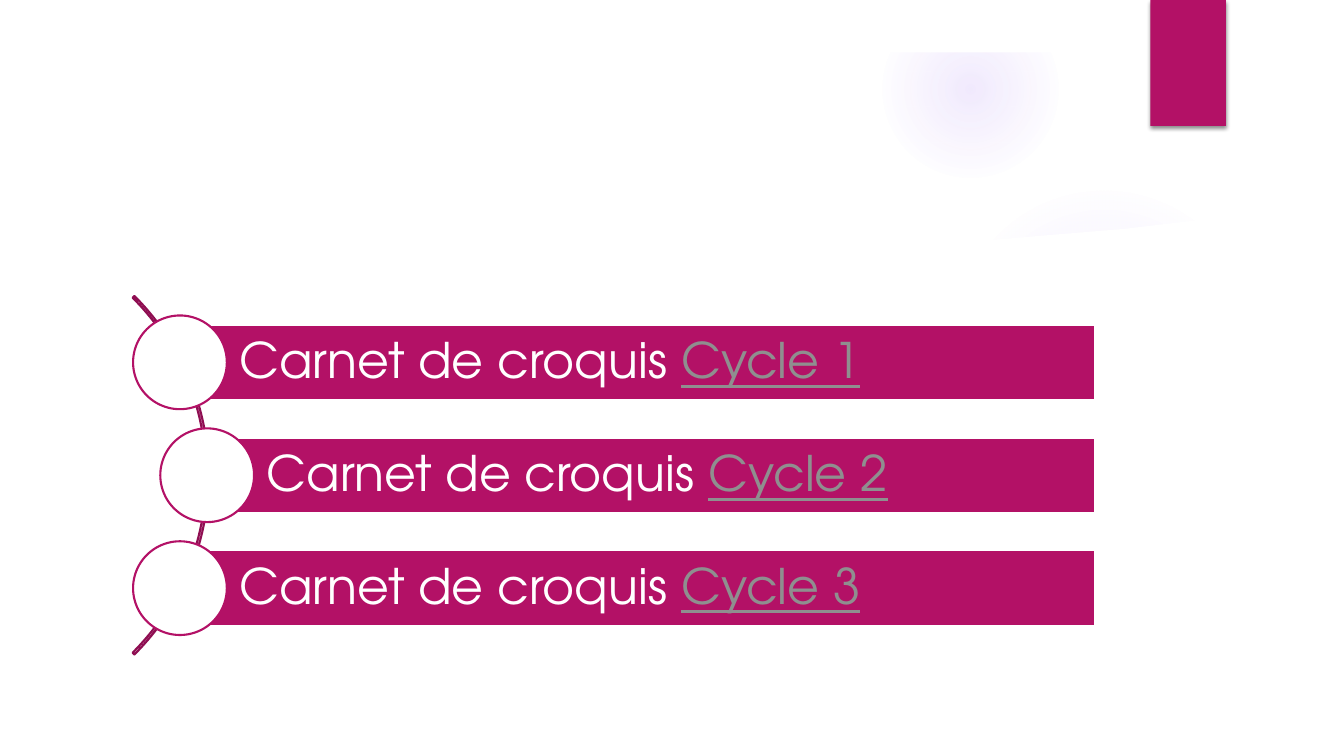
import pptx
import pptx.util
import pptx.oxml
import pptx.oxml.ns
import pptx.dml.color
import pptx.enum.shapes
import pptx.enum.text

Inches, Pt = pptx.util.Inches, pptx.util.Pt
KIND = pptx.enum.shapes.MSO_SHAPE
FONT = "TeX Gyre Adventor"
COLORS = {"pink": "B31166", "dark": "8F0E52", "white": "FFFFFF",
          "link": "8F8F8F", "glow": "9B6BF2", "shade": "000000"}
WAVE = [(0, 0), (0, 4.96), (12.33, 4.96), (12.33, 0), (11.5, 0.13),
        (10.66, 0.23), (9.82, 0.3), (8.99, 0.37), (8.17, 0.41),
        (7.36, 0.43), (6.58, 0.44), (5.57, 0.43), (4.61, 0.4),
        (3.51, 0.34), (2.33, 0.26), (1.37, 0.17), (0.63, 0.08)]
GLOWS = [((9.41, 1.83, 3.08), [(0, 7), (36, 6), (69, 0)]),
         ((8.75, 0.01, 1.75), [(0, 14), (36, 7), (73, 0)])]


def tint(name):
    """Return the named colour."""
    return pptx.dml.color.RGBColor.from_string(COLORS[name])


def paint(shape, fill=None, line=None):
    """Set the fill and outline of a shape and drop its shadow."""
    shape.shadow.inherit = False
    if fill:
        shape.fill.solid()
        shape.fill.fore_color.rgb = tint(fill)
    else:
        shape.fill.background()
    if line:
        shape.line.color.rgb = tint(line)
        shape.line.width = Pt(1.5)
    else:
        shape.line.fill.background()
    return shape


def put(slide, kind, box, fill=None, line=None):
    """Add a painted preset shape in a box given in inches."""
    shape = slide.shapes.add_shape(kind, *map(Inches, box))
    return paint(shape, fill, line)


def glow(slide, box, stops):
    """Add a round glow that fades outwards."""
    props = put(slide, KIND.OVAL, box).element.spPr
    marks = "".join(
        f'<a:gs pos="{pos * 1000}"><a:srgbClr val="{COLORS["glow"]}">'
        f'<a:alpha val="{alpha * 1000}"/></a:srgbClr></a:gs>'
        for pos, alpha in stops)
    grad = pptx.oxml.parse_xml(
        f'<a:gradFill {pptx.oxml.ns.nsdecls("a")}><a:gsLst>{marks}</a:gsLst>'
        '<a:path path="circle"><a:fillToRect l="50000" t="50000" '
        'r="50000" b="50000"/></a:path></a:gradFill>')
    props.replace(props.find(pptx.oxml.ns.qn("a:noFill")), grad)


def backdrop(slide, box):
    """Draw the glows, the white wave and the white frame."""
    left, top, width, height = box
    for (x, y, size), stops in GLOWS:
        glow(slide, (left + x, top + y, size, size), stops)
    points = [(Inches(left + 0.5 + x), Inches(top + 2.04 + y))
              for x, y in WAVE]
    pen = slide.shapes.build_freeform(*points[0])
    pen.add_line_segments(points[1:], close=True)
    paint(pen.convert_to_shape(), "white")
    frame = put(slide, KIND.FRAME, box, "white")
    frame.adjustments[0] = 0.52 / height


def tab(slide, box):
    """Draw the pink tab with its soft shadow."""
    shape = put(slide, KIND.RECTANGLE, box, "pink")
    effects = shape.element.spPr.find(pptx.oxml.ns.qn("a:effectLst"))
    effects.append(pptx.oxml.parse_xml(
        f'<a:outerShdw {pptx.oxml.ns.nsdecls("a")} blurRad="{Pt(3)}" '
        f'dist="{Pt(2)}" dir="5400000" rotWithShape="0">'
        f'<a:srgbClr val="{COLORS["shade"]}"><a:alpha val="45000"/>'
        '</a:srgbClr></a:outerShdw>'))


def label(shape, parts):
    """Write the runs of a bar, the last one styled as a link."""
    frame = shape.text_frame
    frame.word_wrap = True
    frame.vertical_anchor = pptx.enum.text.MSO_ANCHOR.MIDDLE
    frame.margin_left = Inches(0.59)
    frame.margin_top = frame.margin_right = frame.margin_bottom = Inches(0.1)
    para = frame.paragraphs[0]
    para.alignment = pptx.enum.text.PP_ALIGN.LEFT
    para.line_spacing = 0.9
    for text, color, under in parts:
        run = para.add_run()
        run.text = text
        run.font.name = FONT
        run.font.size = Pt(35)
        run.font.color.rgb = tint(color)
        run.font.underline = under


def cycles(slide, box, names):
    """Draw the arc with one bar and one circle for each cycle."""
    left, top, width, height = box
    size, thick, arc = 0.93, 0.75, 5.03
    step = (height - size) / (len(names) - 1)
    curve = put(slide, KIND.BLOCK_ARC,
                (left - 4.28, top + (height - arc) / 2, arc, arc),
                None, "dark")
    for i, value in enumerate((189, 27, 0.005)):
        curve.adjustments[i] = value
    for i, name in enumerate(names):
        x = left + 0.27 * (i % 2)
        y = top + i * step
        start = x + size / 2
        bar = put(slide, KIND.RECTANGLE,
                  (start, y + (size - thick) / 2, left + width - start, thick),
                  "pink", "white")
        label(bar, [("Carnet de croquis ", "white", False),
                    (name, "link", True)])
        put(slide, KIND.OVAL, (x, y, size, size), "white", "pink")


def main():
    """Build and save the slide."""
    deck = pptx.Presentation()
    deck.slide_width, deck.slide_height = Inches(13.33), Inches(7.5)
    slide = deck.slides.add_slide(deck.slide_layouts[6])
    backdrop(slide, (0, 0, 13.33, 7.5))
    tab(slide, (11.41, 0, 0.75, 1.25))
    cycles(slide, (1.32, 3.13, 9.54, 3.17), ["Cycle 1", "Cycle 2", "Cycle 3"])
    deck.save("out.pptx")


if __name__ == "__main__":
    main()
